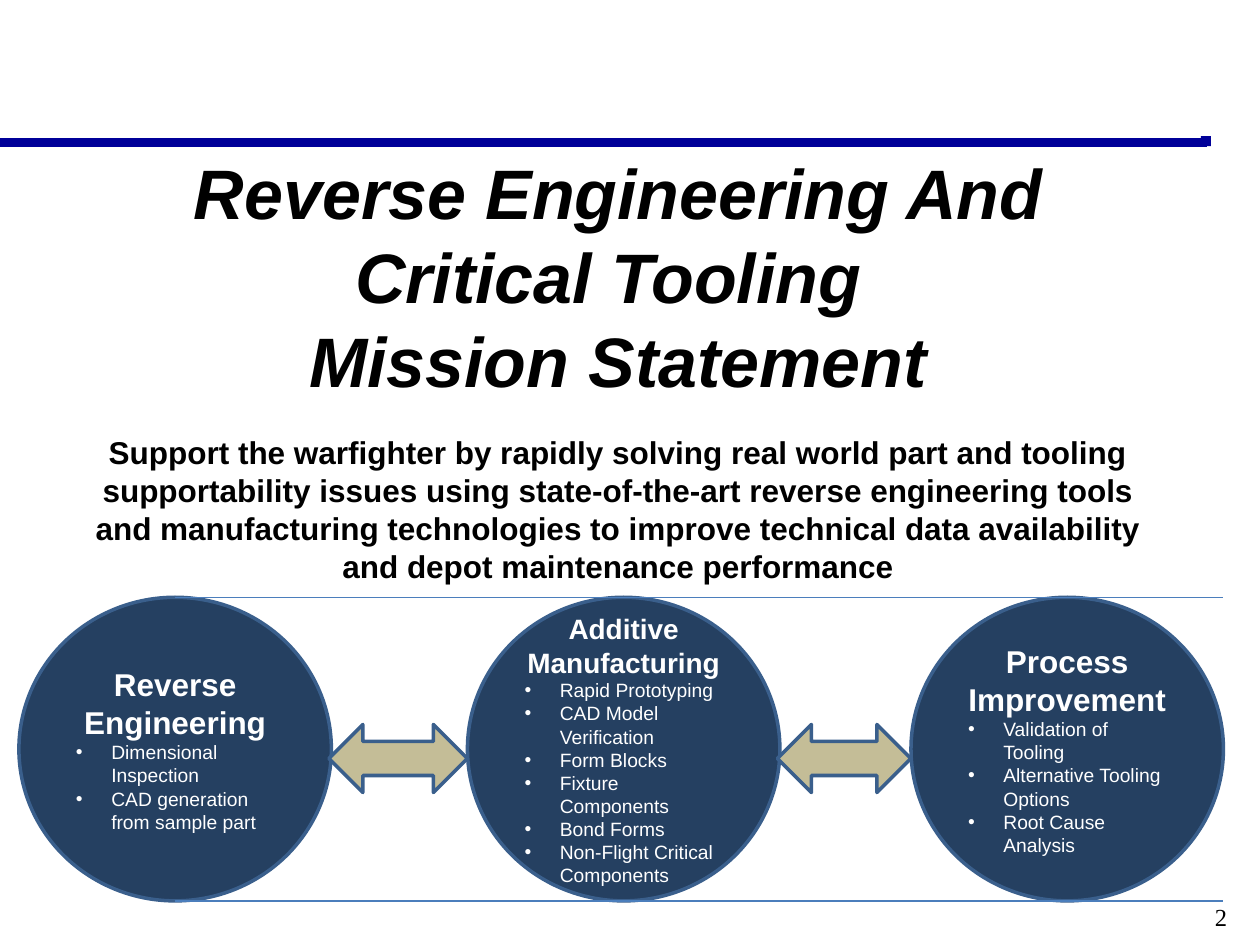
"""Build the mission statement slide with three linked activity circles."""
from dataclasses import dataclass

from lxml import etree
from pptx import Presentation
from pptx.dml.color import RGBColor
from pptx.enum import shapes, text
from pptx.oxml.ns import qn
from pptx.util import Inches, Pt

COLORS = {
    "bar": "000099",
    "text": "000000",
    "circle": "254061",
    "outline": "3A5F8C",
    "circle_text": "FFFFFF",
    "arrow": "C4BD97",
    "rule": "4B7EBC",
}
CIRCLE_TOP, CIRCLE_W, CIRCLE_H = 4.74, 2.48, 2.41
TITLE = ["Reverse Engineering And Critical Tooling ", "Mission Statement"]
MISSION = (
    "Support the warfighter by rapidly solving real world part and tooling "
    "supportability issues using state-of-the-art reverse engineering tools "
    "and manufacturing technologies to improve technical data availability "
    "and depot maintenance performance"
)


@dataclass
class Activity:
    left: float
    heading: str
    size: int
    items: list[str]


ACTIVITIES = [
    Activity(0.15, "Reverse Engineering", 18,
             ["Dimensional Inspection", "CAD generation from sample part"]),
    Activity(3.71, "Additive Manufacturing", 16,
             ["Rapid Prototyping", "CAD Model Verification", "Form Blocks",
              "Fixture Components", "Bond Forms", "Non-Flight Critical Components"]),
    Activity(7.23, "Process Improvement", 18,
             ["Validation of Tooling", "Alternative Tooling Options",
              "Root Cause Analysis"]),
]


def rgb(name: str) -> RGBColor:
    return RGBColor.from_string(COLORS[name])


def set_frame(tf, anchor=text.MSO_ANCHOR.TOP) -> None:
    tf.word_wrap = True
    tf.auto_size = text.MSO_AUTO_SIZE.NONE
    tf.vertical_anchor = anchor
    tf.margin_left = tf.margin_right = Inches(0.09)
    tf.margin_top = tf.margin_bottom = Inches(0.04)


def style(p, size: int, color="text", align=text.PP_ALIGN.CENTER,
          font="Arial", bold=False, italic=False) -> None:
    p.alignment = align
    for r in p.runs:
        f = r.font
        f.name, f.size, f.bold, f.italic = font, Pt(size), bold, italic
        f.color.rgb = rgb(color)


def add_bullet(p) -> None:
    pPr = p._p.get_or_add_pPr()
    pPr.set("marL", str(Inches(0.28)))
    pPr.set("indent", str(-Inches(0.28)))
    etree.SubElement(pPr, qn("a:buFont")).set("typeface", "Arial")
    etree.SubElement(pPr, qn("a:buChar")).set("char", "•")


def add_line(s, x1: float, x2: float, y: float, color: str, width: float) -> None:
    line = s.shapes.add_connector(
        shapes.MSO_CONNECTOR.STRAIGHT, Inches(x1), Inches(y), Inches(x2), Inches(y))
    line.line.color.rgb = rgb(color)
    line.line.width = Pt(width)
    etree.SubElement(line._element.spPr, qn("a:effectLst"))


def add_shape(s, kind, left: float, top: float, width: float, height: float,
              fill: str, outline: str | None = None):
    sp = s.shapes.add_shape(
        kind, Inches(left), Inches(top), Inches(width), Inches(height))
    sp.shadow.inherit = False
    sp.fill.solid()
    sp.fill.fore_color.rgb = rgb(fill)
    if outline:
        sp.line.color.rgb = rgb(outline)
        sp.line.width = Pt(2)
    else:
        sp.line.fill.background()
    return sp


def add_activity(s, activity: Activity) -> None:
    sp = add_shape(s, shapes.MSO_SHAPE.OVAL, activity.left, CIRCLE_TOP,
                   CIRCLE_W, CIRCLE_H, "circle", "outline")
    tf = sp.text_frame
    set_frame(tf, text.MSO_ANCHOR.MIDDLE)
    tf.text = activity.heading
    style(tf.paragraphs[0], activity.size, "circle_text", bold=True)
    for item in activity.items:
        p = tf.add_paragraph()
        p.text = item
        add_bullet(p)
        style(p, 11, "circle_text", text.PP_ALIGN.LEFT)


def add_text(s, left: float, top: float, width: float, height: float, content: str):
    tf = s.shapes.add_textbox(
        Inches(left), Inches(top), Inches(width), Inches(height)).text_frame
    set_frame(tf)
    tf.text = content
    return tf.paragraphs[0]


def add_title(s) -> None:
    title = s.shapes.title
    title.left, title.top = Inches(0.64), Inches(1.15)
    title.width, title.height = Inches(8.53), Inches(2.1)
    tf = title.text_frame
    set_frame(tf)
    tf.text = "\n".join(TITLE)
    for p in tf.paragraphs:
        style(p, 40, bold=True, italic=True)


def main() -> None:
    prs = Presentation()
    prs.slide_width, prs.slide_height = Inches(10), Inches(7.5)
    s = prs.slides.add_slide(prs.slide_layouts[5])

    add_line(s, 0, 9.58, 1.13, "bar", 5)
    add_shape(s, shapes.MSO_SHAPE.RECTANGLE, 9.53, 1.08, 0.08, 0.08, "bar")
    add_title(s)
    style(add_text(s, 0.64, 3.4, 8.53, 1.31, MISSION), 18, bold=True)

    for activity in ACTIVITIES:
        add_activity(s, activity)
    for left, following in zip(ACTIVITIES, ACTIVITIES[1:]):
        start = left.left + CIRCLE_W - 0.02
        add_shape(s, shapes.MSO_SHAPE.LEFT_RIGHT_ARROW, start, 5.75,
                  following.left - start, 0.54, "arrow", "outline")

    first, last = ACTIVITIES[0], ACTIVITIES[-1]
    for y in (CIRCLE_TOP + CIRCLE_H, CIRCLE_TOP):
        add_line(s, first.left + CIRCLE_W / 2, last.left + CIRCLE_W, y, "rule", 0.75)

    style(add_text(s, 9.25, 7.12, 0.58, 0.38, "2"), 14,
          align=text.PP_ALIGN.RIGHT, font="Times New Roman")
    prs.save("out.pptx")


if __name__ == "__main__":
    main()
